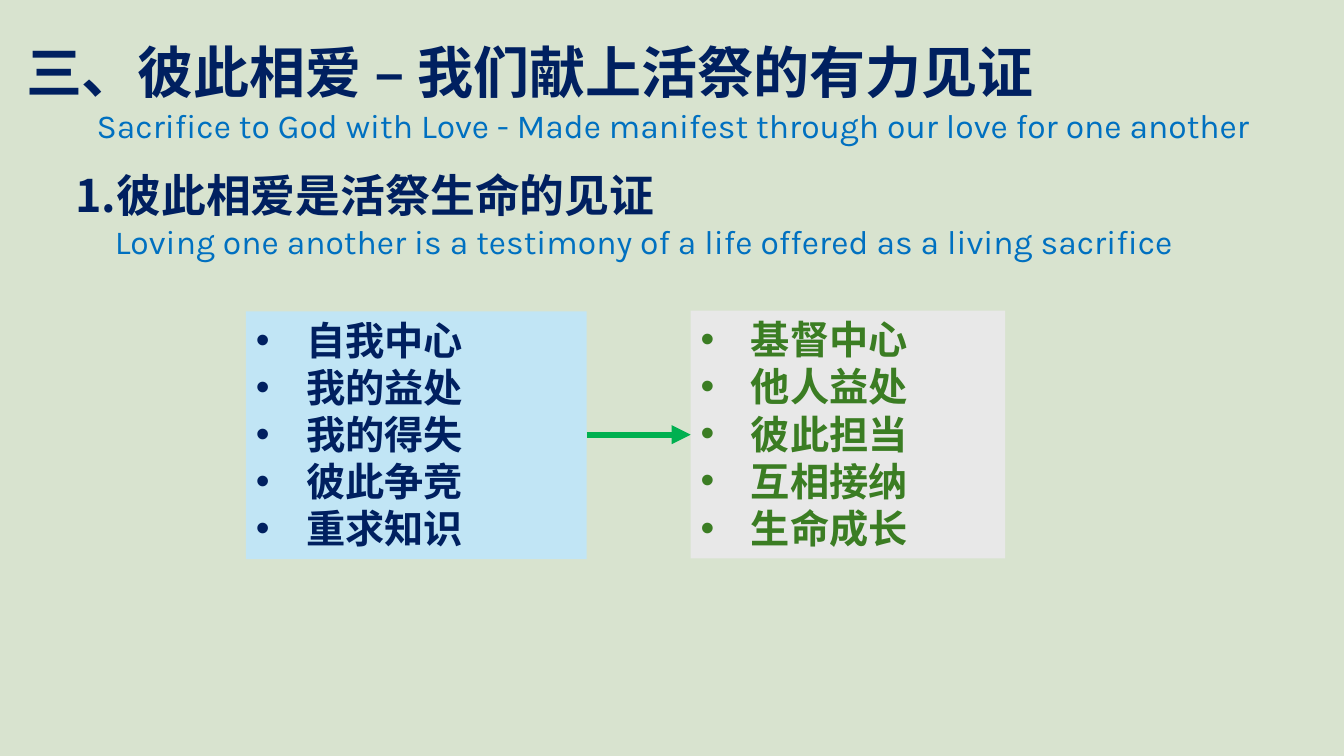
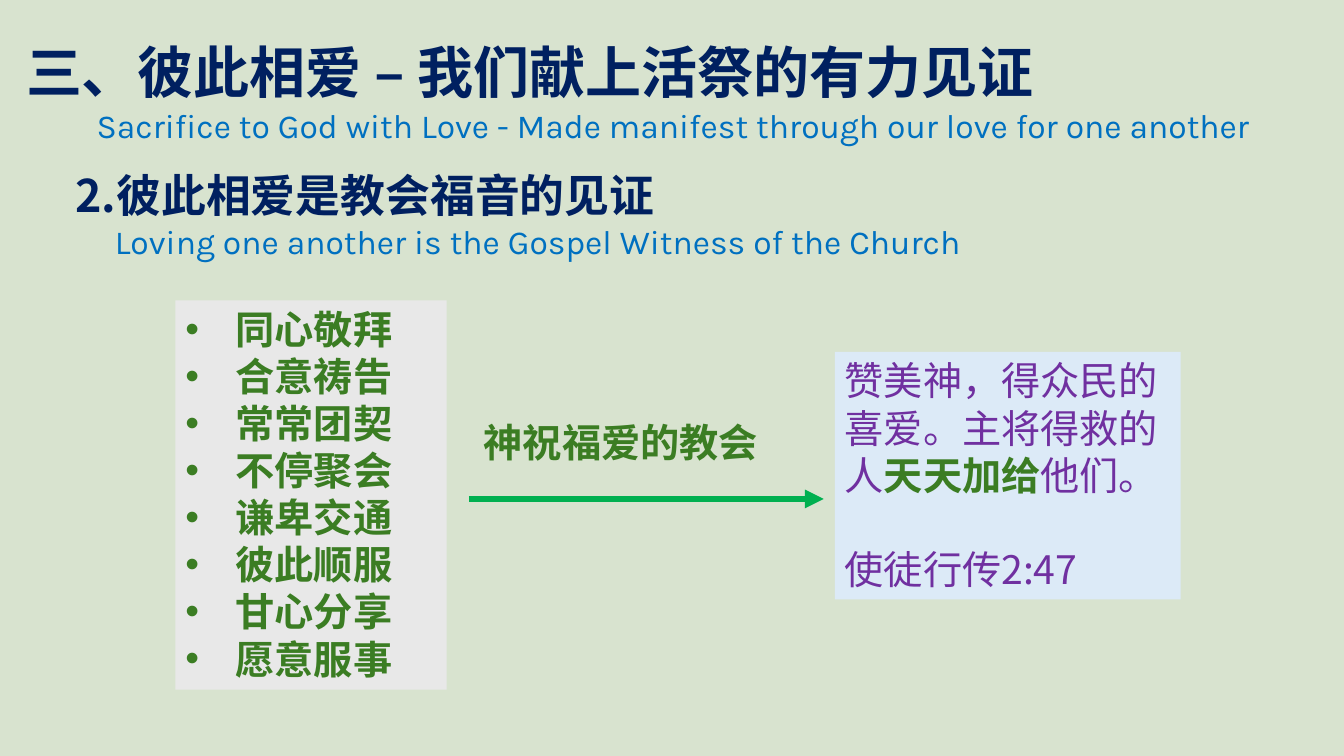
"""Builds two slides on loving one another as a living witness."""
from lxml import etree
from pptx import Presentation
from pptx import util as u
from pptx.dml.color import RGBColor
from pptx.enum import shapes, text
from pptx.oxml import ns

WIDE, HIGH = u.Inches(13.33), u.Inches(7.5)
SAGE = RGBColor(0xD8, 0xE3, 0xCF)
NAVY = RGBColor(0x00, 0x20, 0x60)
BLUE = RGBColor(0x00, 0x70, 0xC0)
GREEN = RGBColor(0x3B, 0x7D, 0x23)
LIME = RGBColor(0x00, 0xB0, 0x50)
PLUM = RGBColor(0x70, 0x30, 0xA0)
GREY = RGBColor(0xE8, 0xE8, 0xE8)
SKY = RGBColor(0xC1, 0xE5, 0xF5)
ICE = RGBColor(0xDC, 0xEA, 0xF7)

HAN, LATIN = "Noto Sans CJK SC", "Karla"
TITLE = {"size": u.Pt(40), "name": HAN, "bold": True, "color": NAVY}
HEAD = {**TITLE, "size": u.Pt(32)}
SUB = {"size": u.Pt(24), "name": LATIN, "bold": False, "color": BLUE}
ITEM = {**TITLE, "size": u.Pt(28)}
GOOD = {**ITEM, "color": GREEN}
VERSE = {**ITEM, "bold": False, "color": PLUM}

TOP = "三、彼此相爱 – 我们献上活祭的有力见证"
TOP_SUB = "Sacrifice to God with Love - Made manifest through our love for one another"


def across(share):
    """Gives a percentage of the slide's width."""
    return round(WIDE * share / 100)


def down(share):
    """Gives a percentage of the slide's height."""
    return round(HIGH * share / 100)


def tall(rows):
    """Gives the height share of a box with this many item rows."""
    return rows * 6.25 + 1.5


def add(node, tag, **attrs):
    """Adds a drawing element below a node."""
    return etree.SubElement(node, ns.qn(tag), attrs)


def write(para, words, form):
    """Adds a run with its format."""
    run = para.add_run()
    run.text = words
    for key, value in form.items():
        if key == "color":
            run.font.color.rgb = value
        else:
            setattr(run.font, key, value)
    add(run.font._element, "a:ea", typeface=form["name"])


def box(slide, place, fill=None):
    """Adds a text box or filled panel and returns its text frame."""
    left, top, width, height = place
    area = across(left), down(top), across(width), down(height)
    if fill is None:
        shape = slide.shapes.add_textbox(*area)
    else:
        shape = slide.shapes.add_shape(shapes.MSO_SHAPE.RECTANGLE, *area)
        shape.shadow.inherit = False
        shape.fill.solid()
        shape.fill.fore_color.rgb = fill
        shape.line.fill.background()
    frame = shape.text_frame
    frame.word_wrap = True
    frame.vertical_anchor = text.MSO_ANCHOR.TOP
    return frame


def lines(frame, count):
    """Yields left-aligned paragraphs of a frame."""
    for row in range(count):
        para = frame.add_paragraph() if row else frame.paragraphs[0]
        para.alignment = text.PP_ALIGN.LEFT
        yield para


def pair(frame, main, form, sub, indent):
    """Writes a Chinese heading over an indented English one."""
    first, second = lines(frame, 2)
    write(first, main, form)
    second._p.get_or_add_pPr().set("marL", str(u.Inches(indent)))
    write(second, sub, SUB)


def panel(slide, left, top, width, fill, form, items):
    """Adds a panel of bulleted items."""
    frame = box(slide, (left, top, width, tall(len(items))), fill)
    for para, item in zip(lines(frame, len(items)), items):
        props = para._p.get_or_add_pPr()
        props.set("marL", str(u.Inches(0.5)))
        props.set("indent", str(-u.Inches(0.5)))
        add(props, "a:buFont", typeface="Arial")
        add(props, "a:buChar", char="•")
        write(para, item, form)


def arrow(slide, start, end, level):
    """Adds a level green arrow."""
    link = slide.shapes.add_connector(
        shapes.MSO_CONNECTOR.STRAIGHT,
        across(start), down(level), across(end), down(level))
    link.line.color.rgb = LIME
    link.line.width = u.Pt(4.5)
    add(link.line._get_or_add_ln(), "a:tailEnd", type="triangle")
    add(link._element.spPr, "a:effectLst")


def page(deck, head, sub):
    """Adds a slide with the shared title and its own heading."""
    slide = deck.slides.add_slide(deck.slide_layouts[6])
    slide.background.fill.solid()
    slide.background.fill.fore_color.rgb = SAGE
    pair(box(slide, (1.2, 4.27, 97.45, 15.73), SAGE), TOP, TITLE, TOP_SUB, 0.7)
    pair(box(slide, (4.88, 21.47, 83.65, 13.87)), head, HEAD, sub, 0.39)
    return slide


def life(deck):
    """Builds the slide on the witness of life."""
    slide = page(deck, "1.彼此相爱是活祭生命的见证",
                 "Loving one another is a testimony of a life offered as a living sacrifice")
    panel(slide, 51.39, 41.1, 23.41, GREY, GOOD,
          ["基督中心", "他人益处", "彼此担当", "互相接纳", "生命成长"])
    panel(slide, 18.3, 41.2, 25.36, SKY, ITEM,
          ["自我中心", "我的益处", "我的得失", "彼此争竞", "重求知识"])
    arrow(slide, 43.66, 51.39, 57.5)


def church(deck):
    """Builds the slide on the witness of the church."""
    slide = page(deck, "2.彼此相爱是教会福音的见证",
                 "Loving one another is the Gospel Witness of the Church")
    panel(slide, 13.05, 39.73, 20.18, GREY, GOOD,
          ["同心敬拜", "合意祷告", "常常团契", "不停聚会",
           "谦卑交通", "彼此顺服", "甘心分享", "愿意服事"])
    arrow(slide, 34.88, 61.29, 66)
    verse, source = lines(box(slide, (62.12, 46.53, 25.73, tall(5)), ICE), 2)
    write(verse, "赞美神，得众民的喜爱。主将得救的人", VERSE)
    write(verse, "天天加给", GOOD)
    write(verse, "他们。", VERSE)
    source.space_before = u.Pt(33.6)
    write(source, "使徒行传2:47", VERSE)
    label, = lines(box(slide, (35.26, 54.67, 23.26, 7.6)), 1)
    write(label, "神祝福爱的教会", GOOD)


def main():
    """Builds and saves the deck."""
    deck = Presentation()
    deck.slide_width, deck.slide_height = WIDE, HIGH
    life(deck)
    church(deck)
    deck.save("out.pptx")


if __name__ == "__main__":
    main()
